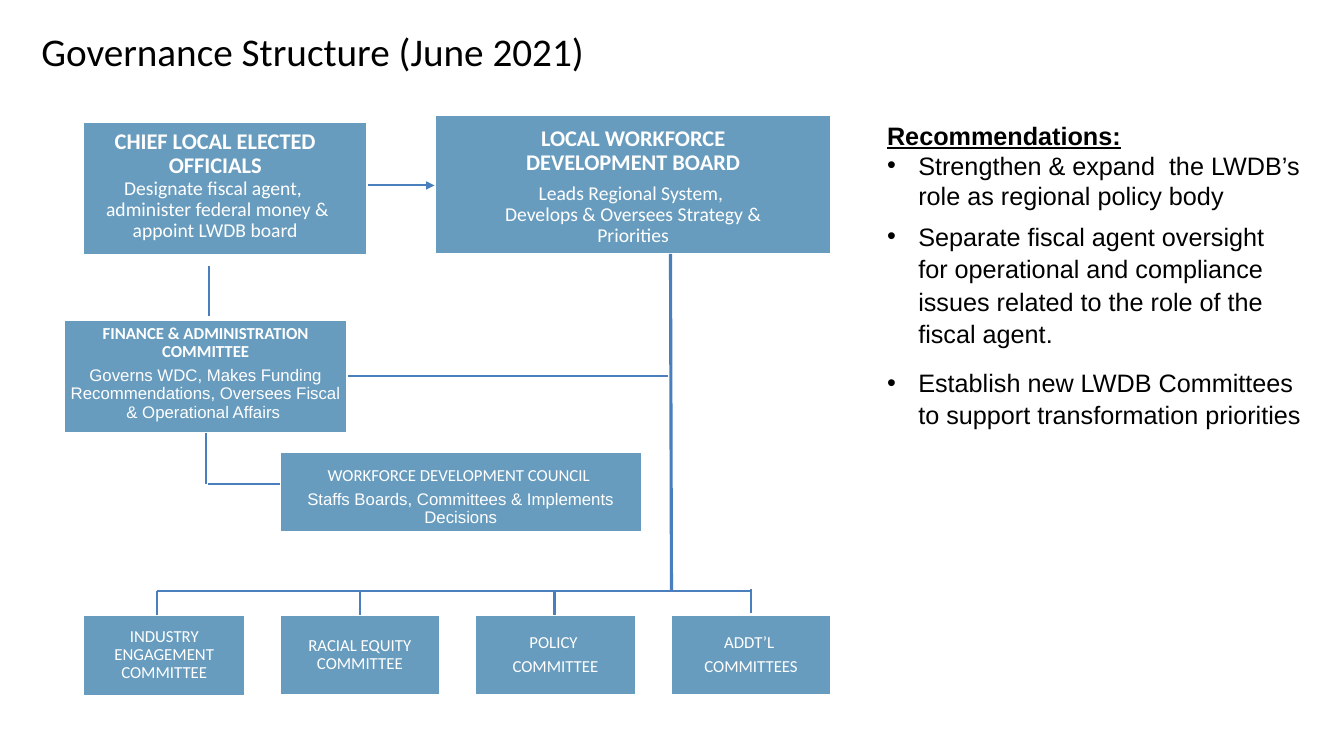
from pptx import Presentation, util as u
from pptx.dml.color import RGBColor
from pptx.enum import shapes, text
from pptx.oxml import ns, xmlchemy

BLUE = RGBColor(0x68, 0x9C, 0xBE)
LINK = RGBColor(0x4B, 0x7E, 0xBC)
WHITE = RGBColor(0xFF, 0xFF, 0xFF)
BLACK = RGBColor(0, 0, 0)
SANS, ARIAL = "Calibri", "Arial"


def inch(*nums):
    return [u.Inches(n) for n in nums]


class Chart:
    def __init__(self, slide):
        self.slide = slide

    def run(self, para, words, size, font=SANS, color=WHITE, bold=False):
        run = para.add_run()
        run.text = words
        run.font.size = u.Pt(size)
        run.font.name = font
        run.font.bold = bold
        run.font.color.rgb = color
        return run

    def inset(self, frame, pad):
        frame.margin_left = frame.margin_right = u.Inches(pad)
        frame.margin_top = frame.margin_bottom = u.Inches(pad)

    def title(self, words, place):
        head = self.slide.shapes.title
        head.left, head.top, head.width, head.height = inch(*place)
        frame = head.text_frame
        self.inset(frame, 0)
        frame.auto_size = text.MSO_AUTO_SIZE.SHAPE_TO_FIT_TEXT
        para = frame.paragraphs[0]
        para.alignment = text.PP_ALIGN.LEFT
        self.run(para, words, 28, color=BLACK)

    def box(self, place, lines, label=None, edge=2):
        rect = self.slide.shapes.add_shape(shapes.MSO_SHAPE.RECTANGLE, *inch(*place))
        rect.shadow.inherit = False
        rect.fill.solid()
        rect.fill.fore_color.rgb = BLUE
        rect.line.color.rgb = WHITE
        rect.line.width = u.Pt(edge)
        frame = self.slide.shapes.add_textbox(*inch(*(label or place))).text_frame
        frame.word_wrap = True
        frame.vertical_anchor = text.MSO_ANCHOR.MIDDLE
        self.inset(frame, 0.01)
        for num, (words, size, font, bold, after) in enumerate(lines):
            para = frame.add_paragraph() if num else frame.paragraphs[0]
            para.alignment = text.PP_ALIGN.CENTER
            para.line_spacing = 0.9
            para.space_after = u.Pt(after)
            self.run(para, words, size, font, bold=bold)

    def link(self, x1, y1, x2, y2, width=1.5, arrow=False):
        line = self.slide.shapes.add_connector(
            shapes.MSO_CONNECTOR.STRAIGHT, *inch(x1, y1, x2, y2))
        line.line.color.rgb = LINK
        line.line.width = u.Pt(width)
        if arrow:
            tip = xmlchemy.OxmlElement("a:tailEnd")
            tip.set("type", "triangle")
            line.line._get_or_add_ln().append(tip)
        props = line._element.find(ns.qn("p:spPr"))
        props.append(xmlchemy.OxmlElement("a:effectLst"))

    def notes(self, place, head, items):
        frame = self.slide.shapes.add_textbox(*inch(*place)).text_frame
        frame.word_wrap = True
        frame.auto_size = text.MSO_AUTO_SIZE.SHAPE_TO_FIT_TEXT
        run = self.run(frame.paragraphs[0], head, 18, ARIAL, BLACK, True)
        run.font.underline = True
        for words, space, after in items:
            para = frame.add_paragraph()
            para.line_spacing = space
            para.space_after = u.Pt(after)
            props = para._p.get_or_add_pPr()
            props.set("marL", str(u.Inches(0.31)))
            props.set("indent", str(u.Inches(-0.31)))
            face = xmlchemy.OxmlElement("a:buFont")
            face.set("typeface", ARIAL)
            mark = xmlchemy.OxmlElement("a:buChar")
            mark.set("char", "•")
            props.extend([face, mark])
            self.run(para, words, 18, ARIAL, BLACK)


def main():
    deck = Presentation()
    deck.slide_width, deck.slide_height = inch(13.33, 7.5)
    chart = Chart(deck.slides.add_slide(deck.slide_layouts[5]))
    chart.title("Governance Structure (June 2021)", (0.41, 0.27, 12.51, 0.47))

    chart.box((0.82, 1.21, 2.82, 1.32), [
        ("CHIEF LOCAL ELECTED OFFICIALS", 16, SANS, True, 0),
        ("Designate fiscal agent, ", 14, SANS, False, 0),
        (" administer federal money & appoint LWDB board", 14, SANS, False, 0),
    ], (0.92, 1.14, 2.43, 1.41))
    chart.box((4.31, 1.14, 3.94, 1.38), [
        ("LOCAL WORKFORCE DEVELOPMENT BOARD", 16, SANS, True, 5.6),
        ("Leads Regional System, ", 14, SANS, False, 0),
        ("Develops & Oversees Strategy & Priorities", 14, SANS, False, 0),
    ], (4.75, 1.17, 3.06, 1.37))
    chart.box((0.63, 3.17, 2.82, 1.13), [
        ("FINANCE & ADMINISTRATION COMMITTEE", 12, SANS, True, 4.2),
        ("Governs WDC, Makes Funding Recommendations, Oversees Fiscal "
         "& Operational Affairs ", 12, ARIAL, False, 4.2),
    ], (0.63, 3.14, 2.82, 1.13))
    chart.box((2.77, 4.48, 3.6, 0.8), [
        ("WORKFORCE DEVELOPMENT COUNCIL ", 12, SANS, False, 4.2),
        ("Staffs Boards, Committees & Implements Decisions", 12, ARIAL, False, 4.2),
    ], (2.77, 4.48, 3.6, 0.9))

    teams = [
        ["INDUSTRY ENGAGEMENT COMMITTEE"],
        ["RACIAL EQUITY COMMITTEE"],
        ["POLICY ", "COMMITTEE"],
        ["ADDT’L ", "COMMITTEES"],
    ]
    for num, team in enumerate(teams):
        lines = [(words, 12, SANS, False, 4.2) for words in team]
        chart.box((0.83 + 1.94 * num, 6.1, 1.6, 0.8), lines, edge=2 if num else 1)

    chart.link(3.65, 1.84, 4.31, 1.84, arrow=True)
    chart.link(6.65, 2.52, 6.66, 5.86, 2.25)
    chart.link(6.63, 3.73, 3.45, 3.73)
    chart.link(7.45, 5.86, 1.56, 5.86)
    chart.link(2.07, 3.14, 2.07, 2.64)
    for x, top in ((1.56, 5.86), (3.57, 5.86), (5.5, 5.86), (7.45, 5.84)):
        chart.link(x, top + 0.24, x, top)
    chart.link(2.04, 4.8, 2.04, 4.3)
    chart.link(2.06, 4.8, 2.78, 4.8)

    chart.notes((8.7, 1.14, 4.3, 3.51), "Recommendations:", [
        ("Strengthen & expand  the LWDB’s role as regional policy body", 1.0, 6),
        ("Separate fiscal agent oversight for operational and compliance "
         "issues related to the role of the fiscal agent.", 1.07, 12),
        ("Establish new LWDB Committees to support transformation priorities",
         1.07, 12),
    ])
    deck.save("out.pptx")


if __name__ == "__main__":
    main()
